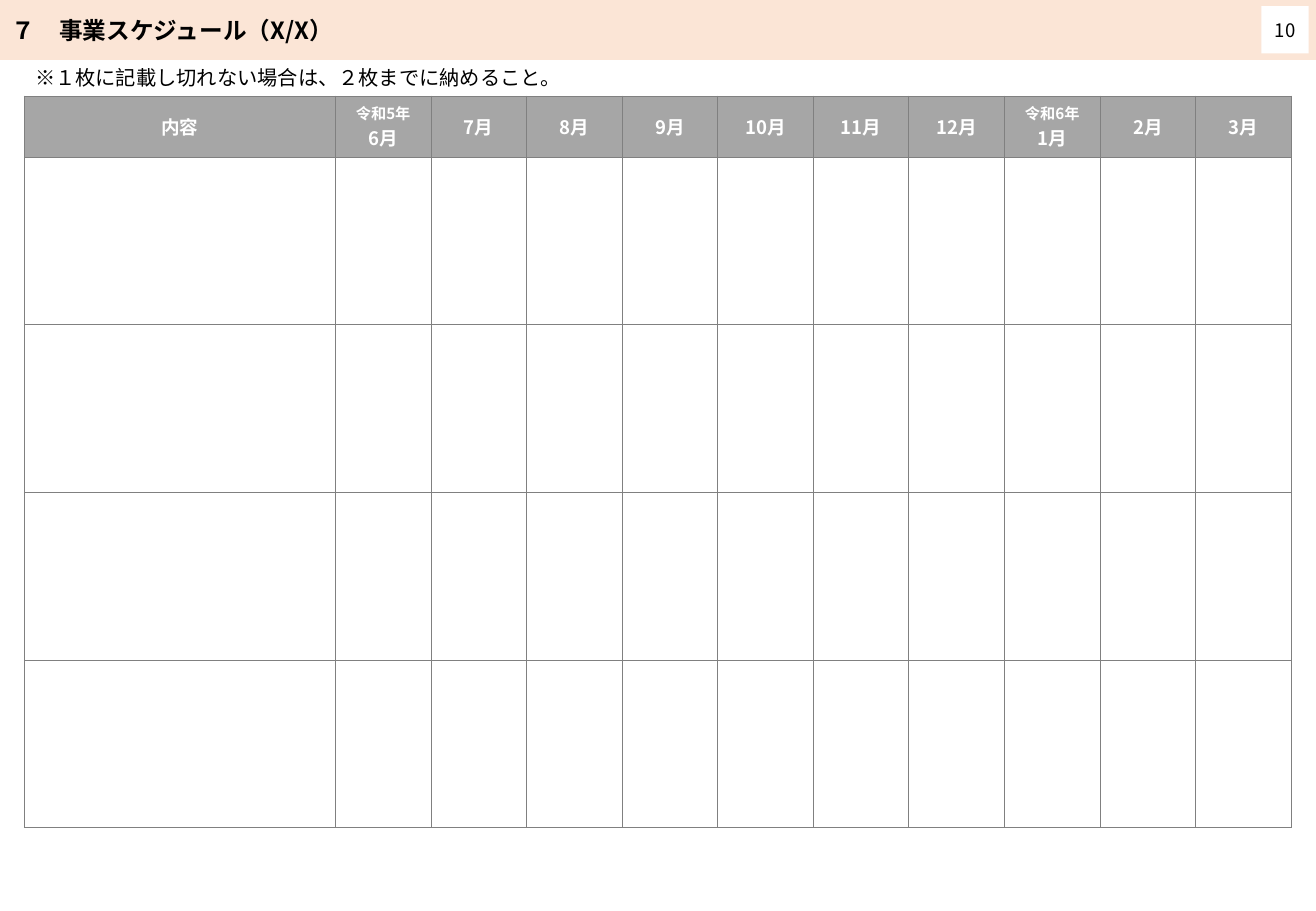
from dataclasses import dataclass

from lxml import etree
from pptx import Presentation
from pptx import util as u
from pptx.dml.color import RGBColor
from pptx.enum import shapes, text
from pptx.oxml import ns

PX = 9144  # 100 px to the inch
FONT = "Noto Sans CJK JP"
COLORS = {
    "band": "FBE5D6",
    "header": "A6A6A6",
    "grid": "808080",
    "white": "FFFFFF",
    "black": "000000",
}
HEADER_H, BODY_H, BODY_ROWS = 48, 138, 4
CONTENT_W = 256


@dataclass(frozen=True)
class Box:
    x: int
    y: int
    w: int
    h: int

    def emu(self) -> tuple[int, int, int, int]:
        return self.x * PX, self.y * PX, self.w * PX, self.h * PX


@dataclass(frozen=True)
class Heading:
    label: str
    era: str = ""


HEADINGS = [
    Heading("内容"),
    Heading("6月", era="令和5年"),
    *(Heading(f"{month}月") for month in range(7, 13)),
    Heading("1月", era="令和6年"),
    Heading("2月"),
    Heading("3月"),
]
TABLE = Box(20, 79, 1043, HEADER_H + BODY_ROWS * BODY_H)


def rgb(name: str) -> RGBColor:
    return RGBColor.from_string(COLORS[name])


def write(p, content: str, *, size: int, color: str = "black",
          bold: bool = False, align=text.PP_ALIGN.LEFT) -> None:
    p.alignment = align
    r = p.add_run()
    r.text = content
    r.font.name = FONT
    r.font.size = u.Pt(size)
    r.font.bold = bold
    r.font.color.rgb = rgb(color)
    etree.SubElement(r.font._element, ns.qn("a:ea"), typeface=FONT)


def add_rect(slide, box: Box, fill: str, line: str | None = None):
    sp = slide.shapes.add_shape(shapes.MSO_SHAPE.RECTANGLE, *box.emu())
    sp.shadow.inherit = False
    sp.fill.solid()
    sp.fill.fore_color.rgb = rgb(fill)
    if line:
        sp.line.color.rgb = rgb(line)
        sp.line.width = u.Pt(1)
    else:
        sp.line.fill.background()
    sp.text_frame.vertical_anchor = text.MSO_ANCHOR.MIDDLE
    return sp


def add_borders(cell) -> None:
    """Draw all four cell edges; call before setting the cell's fill."""
    tc_pr = cell._tc.get_or_add_tcPr()
    for side in ("lnL", "lnR", "lnT", "lnB"):
        ln = etree.SubElement(tc_pr, ns.qn(f"a:{side}"), w=str(u.Pt(0.5)))
        fill = etree.SubElement(ln, ns.qn("a:solidFill"))
        etree.SubElement(fill, ns.qn("a:srgbClr"), val=COLORS["grid"])


def fill_heading(cell, heading: Heading) -> None:
    cell.fill.solid()
    cell.fill.fore_color.rgb = rgb("header")
    cell.vertical_anchor = text.MSO_ANCHOR.MIDDLE
    style = dict(color="white", bold=True, align=text.PP_ALIGN.CENTER)
    tf = cell.text_frame
    p = tf.paragraphs[0]
    if heading.era:
        write(p, heading.era, size=9, **style)
        p = tf.add_paragraph()
    write(p, heading.label, size=11, **style)


def add_schedule(slide) -> None:
    frame = slide.shapes.add_table(BODY_ROWS + 1, len(HEADINGS), *TABLE.emu())
    table = frame.table
    table.first_row = table.horz_banding = False
    month_w = (TABLE.w - CONTENT_W) * PX // (len(HEADINGS) - 1)
    for i, col in enumerate(table.columns):
        col.width = month_w if i else CONTENT_W * PX
    for i, row in enumerate(table.rows):
        row.height = (BODY_H if i else HEADER_H) * PX
        for cell, heading in zip(row.cells, HEADINGS):
            add_borders(cell)
            if i:
                cell.fill.background()
            else:
                fill_heading(cell, heading)


def main() -> None:
    prs = Presentation()
    prs.slide_width, prs.slide_height = 1083 * PX, 750 * PX
    slide = prs.slides.add_slide(prs.slide_layouts[6])

    band = add_rect(slide, Box(0, 0, 1083, 49), "band", line="band")
    write(band.text_frame.paragraphs[0], "７　事業スケジュール（X/X）", size=14, bold=True)

    page = add_rect(slide, Box(1038, 5, 39, 39), "white")
    page.text_frame.margin_left = page.text_frame.margin_right = 0
    write(page.text_frame.paragraphs[0], "10", size=11, align=text.PP_ALIGN.CENTER)

    add_schedule(slide)

    note = slide.shapes.add_textbox(*Box(19, 49, 1046, 30).emu())
    note.text_frame.word_wrap = True
    write(note.text_frame.paragraphs[0],
          "※１枚に記載し切れない場合は、２枚までに納めること。", size=12)

    prs.save("out.pptx")


if __name__ == "__main__":
    main()
